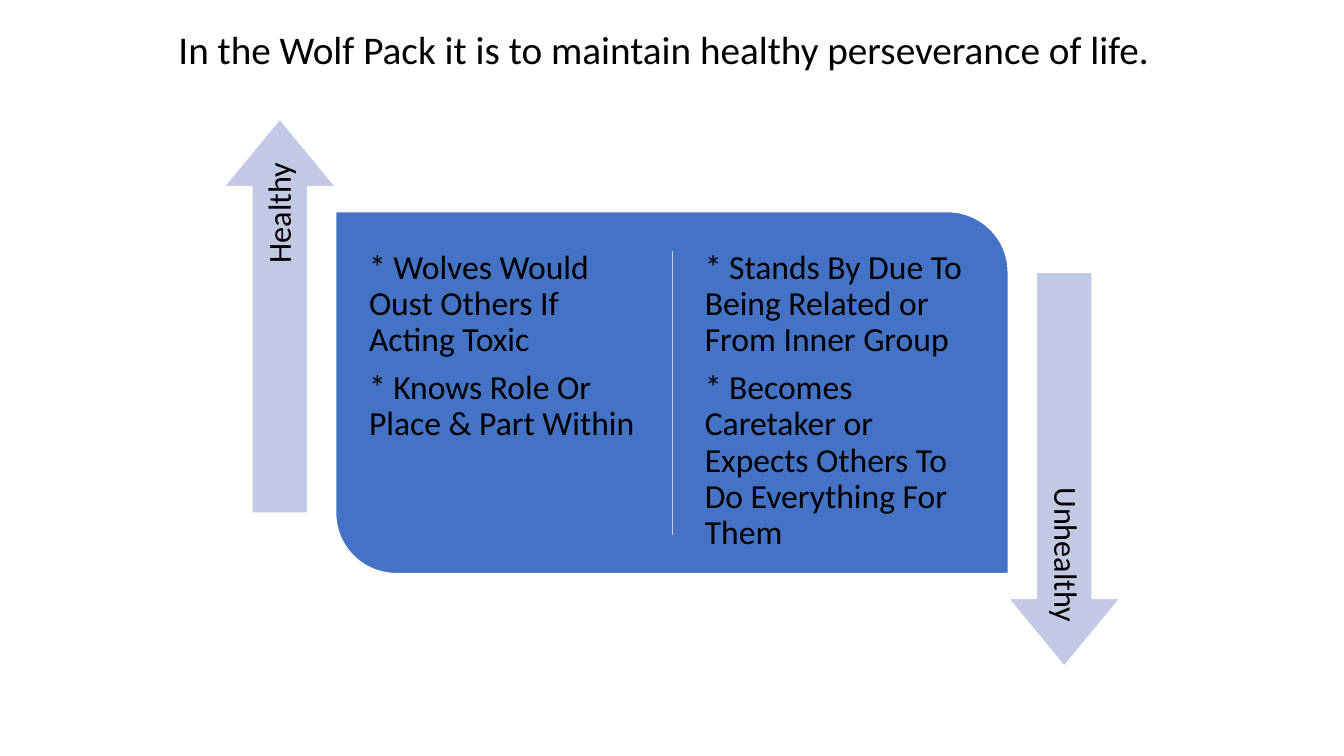
from collections import namedtuple

from lxml.etree import SubElement
from pptx import Presentation
from pptx.dml.color import RGBColor as Rgb
from pptx.enum.shapes import MSO_CONNECTOR as Link, MSO_SHAPE as Shape
from pptx.enum.text import MSO_ANCHOR as Anchor, MSO_AUTO_SIZE as Fit, PP_ALIGN as Align
from pptx.oxml.ns import qn
from pptx.util import Pt

PX = 9144  # 100 px to the inch

Theme = namedtuple("Theme", "font ink panel pale edge title body label")
THEME = Theme(
    font="Calibri",
    ink=Rgb.from_string("000000"),
    panel=Rgb.from_string("4472C4"),
    pale=Rgb.from_string("C1C9E4"),
    edge=Rgb.from_string("FFFFFF"),
    title=28, body=24, label=23,
)


def put(item, values):
    for name, value in values.items():
        setattr(item, name, value)


class Board:
    def __init__(self, slide, theme):
        self.slide, self.theme = slide, theme

    def place(self, item, box):
        names = ("left", "top", "width", "height")
        put(item, {name: n * PX for name, n in zip(names, box)})

    def letter(self, item, lines, size, pads, anchor=Anchor.TOP, **style):
        frame = item.text_frame
        names = ("margin_left", "margin_top", "margin_right", "margin_bottom")
        put(frame, {name: n * PX for name, n in zip(names, pads)})
        put(frame, {"word_wrap": True, "auto_size": Fit.NONE, "vertical_anchor": anchor})
        frame.text = "\n".join(lines)
        for para in frame.paragraphs:
            put(para, {"alignment": Align.LEFT, "space_before": Pt(0), **style})
            font = para.runs[0].font
            put(font, {"name": self.theme.font, "size": Pt(size)})
            font.color.rgb = self.theme.ink

    def title(self, text, box):
        item = self.slide.shapes.title
        self.place(item, box)
        self.letter(item, [text], self.theme.title, (156, 5, 10, 5))

    def shape(self, kind, box, fill, bends, turn=0):
        item = self.slide.shapes.add_shape(kind, *(n * PX for n in box))
        item.shadow.inherit = False
        item.rotation = turn
        for i, bend in enumerate(bends):
            item.adjustments[i] = bend
        item.fill.solid()
        item.fill.fore_color.rgb = fill
        item.line.color.rgb = self.theme.edge
        item.line.width = Pt(1)

    def rule(self, x, top, end):
        item = self.slide.shapes.add_connector(
            Link.STRAIGHT, x * PX, top * PX, x * PX, end * PX)
        item.line.color.rgb = self.theme.pale
        item.line.width = Pt(1)
        SubElement(item._element.spPr, qn("a:effectLst"))

    def points(self, slot, lines, box):
        item = self.slide.placeholders[slot]
        self.place(item, box)
        size = self.theme.body
        self.letter(item, lines, size, (10,) * 4,
                    line_spacing=0.9, space_after=Pt(size * 0.35))
        # Plain lines, without the template's bullets and indents
        for para in item.text_frame.paragraphs:
            props = para._p.get_or_add_pPr()
            props.set("marL", "0")
            props.set("indent", "0")
            SubElement(props, qn("a:buNone"))
        # Lift the list above the panel
        node = item._element
        node.getparent().append(node)

    def arrow(self, text, box, slot, turn):
        self.shape(Shape.RIGHT_ARROW, box, self.theme.pale, (0.498, 0.607), turn)
        item = self.slide.shapes.add_textbox(*(n * PX for n in slot))
        item.rotation = turn
        self.letter(item, [text], self.theme.label, (10,) * 4, Anchor.MIDDLE,
                    alignment=Align.RIGHT, line_spacing=0.9)


def main():
    deck = Presentation()
    put(deck, {"slide_width": 1333 * PX, "slide_height": 750 * PX})
    board = Board(deck.slides.add_slide(deck.slide_layouts[3]), THEME)

    # Heading
    board.title("In the Wolf Pack it is to maintain healthy perseverance of life.",
                (21, 20, 1292, 118))

    # Panel with its divider
    board.shape(Shape.ROUND_2_DIAG_RECTANGLE, (333, 210, 667, 359),
                THEME.panel, (0, 0.167))
    board.rule(667, 249, 531)

    # Two lists
    lists = (
        ("* Wolves Would Oust Others If Acting Toxic",
         "* Knows Role Or Place & Part Within"),
        ("* Stands By Due To Being Related or From Inner Group",
         "* Becomes Caretaker or Expects Others To Do Everything For Them"),
    )
    for i, lines in enumerate(lists):
        board.points(i + 1, lines, (356 + 333 * i, 238, 289, 304))

    # Arrows at the sides
    board.arrow("Healthy", (82, 258, 391, 111), (99, 303, 358, 55), 270)
    board.arrow("Unhealthy", (860, 410, 391, 111), (877, 421, 358, 55), 90)

    deck.save("out.pptx")


if __name__ == "__main__":
    main()
